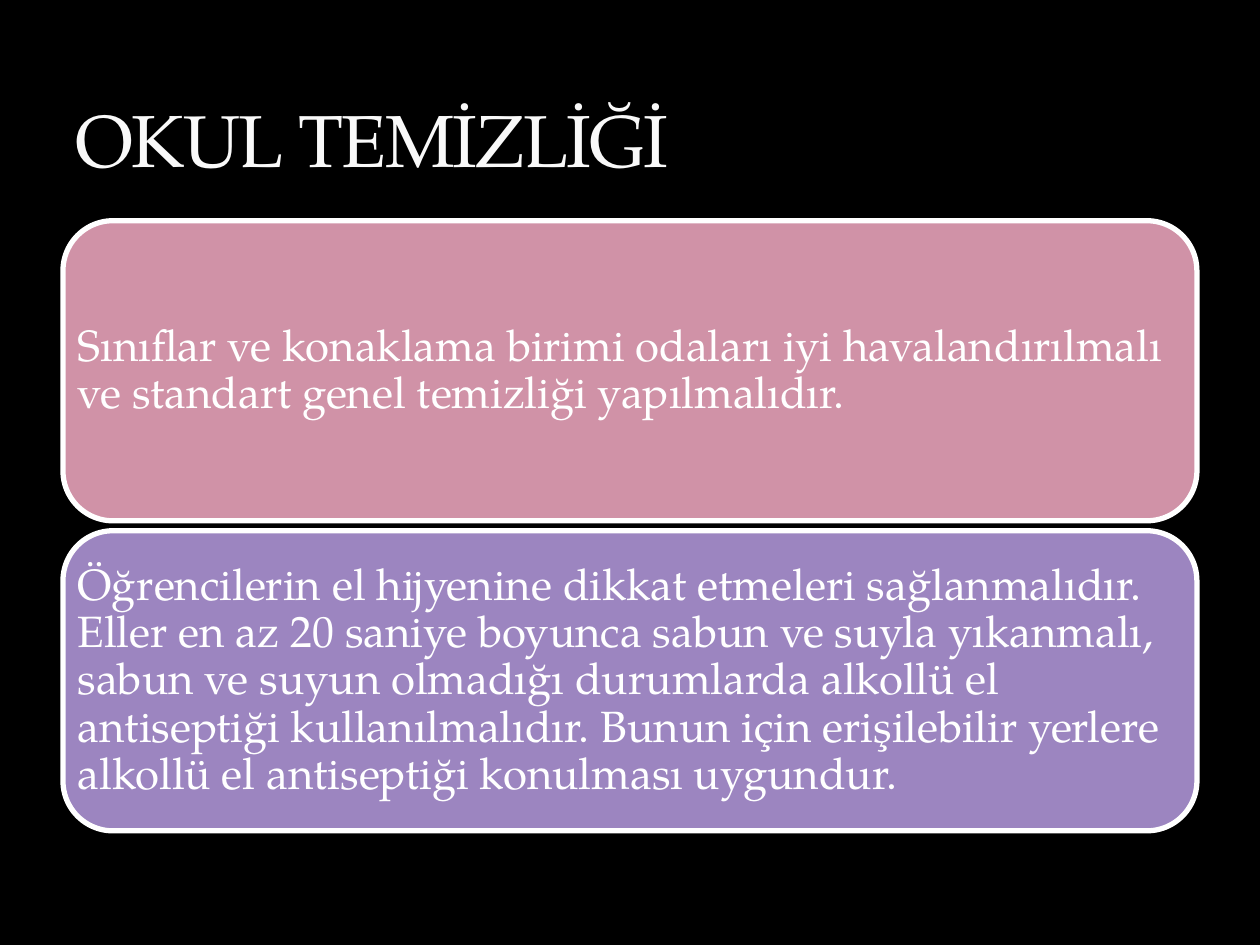
import pptx
import pptx.dml.color
import pptx.enum.shapes
import pptx.enum.text
import pptx.util

Cm = pptx.util.Cm
Pt = pptx.util.Pt

FONT = "TeX Gyre Pagella"
COLOURS = {
    "background": "000000",
    "title": "F9F9F9",
    "white": "FFFFFF",
    "rose": "D092A7",
    "violet": "9C85C0",
}
TITLE = "OKUL TEMİZLİĞİ"
RULES = [
    ("rose", "Sınıflar ve konaklama birimi odaları iyi havalandırılmalı ve "
             "standart genel temizliği yapılmalıdır."),
    ("violet", "Öğrencilerin el hijyenine dikkat etmeleri sağlanmalıdır. "
               "Eller en az 20 saniye boyunca sabun ve suyla yıkanmalı, sabun "
               "ve suyun olmadığı durumlarda alkollü el antiseptiği "
               "kullanılmalıdır. Bunun için erişilebilir yerlere alkollü el "
               "antiseptiği konulması uygundur."),
]


def colour(name):
    return pptx.dml.color.RGBColor.from_string(COLOURS[name])


def add_run(paragraph, text, size, colour_name):
    run = paragraph.add_run()
    run.text = text
    run.font.name = FONT
    run.font.size = Pt(size)
    run.font.color.rgb = colour(colour_name)
    return run


def place_title(slide, left, top, width, height):
    title = slide.shapes.title
    title.left, title.top = Cm(left), Cm(top)
    title.width, title.height = Cm(width), Cm(height)
    frame = title.text_frame
    frame.word_wrap = True
    frame.auto_size = pptx.enum.text.MSO_AUTO_SIZE.NONE
    frame.vertical_anchor = pptx.enum.text.MSO_ANCHOR.BOTTOM
    paragraph = frame.paragraphs[0]
    paragraph.alignment = pptx.enum.text.PP_ALIGN.LEFT
    run = add_run(paragraph, TITLE, 42, "title")
    run.font._element.set("spc", "-100")


def add_rule_card(slide, left, top, width, height, fill_name, text):
    card = slide.shapes.add_shape(
        pptx.enum.shapes.MSO_SHAPE.ROUNDED_RECTANGLE,
        Cm(left), Cm(top), Cm(width), Cm(height))
    card.shadow.inherit = False
    card.fill.solid()
    card.fill.fore_color.rgb = colour(fill_name)
    card.line.color.rgb = colour("white")
    card.line.width = Pt(3)
    frame = card.text_frame
    frame.word_wrap = True
    frame.vertical_anchor = pptx.enum.text.MSO_ANCHOR.MIDDLE
    frame.margin_left = frame.margin_right = 0
    frame.margin_top = frame.margin_bottom = 0
    paragraph = frame.paragraphs[0]
    paragraph.alignment = pptx.enum.text.PP_ALIGN.LEFT
    paragraph.line_spacing = 0.9
    add_run(paragraph, text, 25, "white")


def add_rule_cards(slide, left, top, width, height, gap=0.2):
    card_height = (height - gap * (len(RULES) - 1)) / len(RULES)
    for index, (fill_name, text) in enumerate(RULES):
        card_top = top + index * (card_height + gap)
        add_rule_card(slide, left, card_top, width, card_height, fill_name, text)


def main():
    presentation = pptx.Presentation()
    presentation.slide_width = Cm(25.4)
    presentation.slide_height = Cm(19.05)
    slide = presentation.slides.add_slide(presentation.slide_layouts[5])
    slide.background.fill.solid()
    slide.background.fill.fore_color.rgb = colour("background")
    add_rule_cards(slide, 1.27, 4.45, 22.86, 12.3)
    place_title(slide, 1.27, 0.43, 22.86, 3.38)
    presentation.save("out.pptx")


if __name__ == "__main__":
    main()
